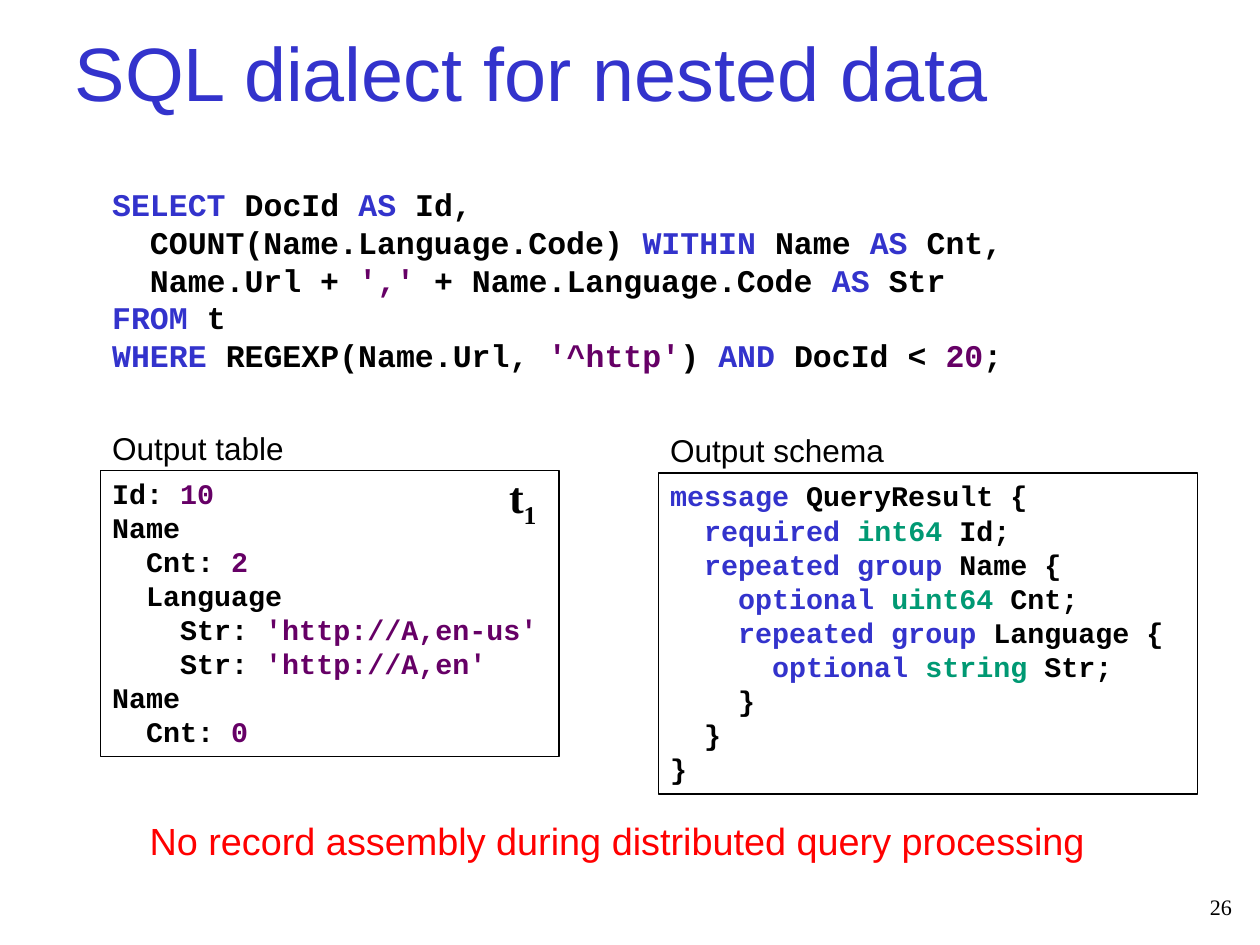
from dataclasses import dataclass
from functools import partial

from pptx import Presentation
from pptx.dml.color import RGBColor
from pptx.enum.shapes import MSO_SHAPE
from pptx.enum.text import MSO_ANCHOR, MSO_AUTO_SIZE, PP_ALIGN
from pptx.slide import Slide
from pptx.text.text import TextFrame
from pptx.util import Pt

PX = 9144  # EMU per px, 100 px to the inch
TITLE_ONLY = 5
COLOURS = {
    "plain": "000000",
    "keyword": "3333CC",
    "literal": "660066",
    "type": "009973",
    "alert": "FF0000",
}


@dataclass(frozen=True)
class Span:
    text: str
    colour: str = "plain"
    subscript: bool = False


@dataclass(frozen=True)
class Block:
    left: int
    top: int
    width: int
    height: int
    lines: list[list[Span]]
    size: int
    font: str = "Arial"
    bold: bool = False
    framed: bool = False
    wrap: bool = True
    align: PP_ALIGN = PP_ALIGN.LEFT


plain = Span
keyword = partial(Span, colour="keyword")
literal = partial(Span, colour="literal")
type_name = partial(Span, colour="type")
code = partial(Block, font="Courier New", bold=True)

QUERY = [
    [keyword("SELECT "), plain("DocId "), keyword("AS"), plain(" Id,")],
    [plain("  COUNT(Name.Language.Code) "), keyword("WITHIN"), plain(" Name "),
     keyword("AS "), plain("Cnt,")],
    [plain("  Name.Url + "), literal("',' "), plain("+ Name.Language.Code "),
     keyword("AS "), plain("Str")],
    [keyword("FROM "), plain("t")],
    [keyword("WHERE "), plain("REGEXP(Name.Url, "), literal("'^http'"), plain(") "),
     keyword("AND "), plain("DocId < "), literal("20"), plain(";")],
]
OUTPUT_TABLE = [
    [plain("Id: "), literal("10")],
    [plain("Name")],
    [plain("  Cnt: "), literal("2")],
    [plain("  Language")],
    [plain("    Str: "), literal("'http://A,en-us'")],
    [plain("    Str: "), literal("'http://A,en'")],
    [plain("Name")],
    [plain("  Cnt: "), literal("0")],
]
OUTPUT_SCHEMA = [
    [keyword("message "), plain("QueryResult {")],
    [keyword("  required "), type_name("int64 "), plain("Id;")],
    [keyword("  repeated group "), plain("Name {")],
    [keyword("    optional "), type_name("uint64 "), plain("Cnt;")],
    [keyword("    repeated group "), plain("Language {")],
    [keyword("      optional "), type_name("string "), plain("Str;")],
    [plain("    }")],
    [plain("  }")],
    [plain("}")],
]
TITLE = Block(56, 17, 1000, 92, [[keyword("SQL dialect for nested data")]], 48)
BLOCKS = [
    code(89, 415, 404, 252, OUTPUT_TABLE, 18, framed=True),
    Block(439, 409, 67, 57, [[plain("t"), plain("1", subscript=True)]], 28,
          "Times New Roman", bold=True),
    code(89, 158, 925, 178, QUERY, 20),
    code(581, 417, 475, 283, OUTPUT_SCHEMA, 18, framed=True),
    Block(1014, 783, 82, 32, [[plain("26")]], 14, "Times New Roman",
          align=PP_ALIGN.RIGHT),
    Block(89, 373, 173, 44, [[plain("Output table")]], 20, wrap=False),
    Block(581, 375, 210, 44, [[plain("Output schema")]], 20, wrap=False),
    Block(122, 716, 908, 50,
          [[Span("No record assembly during distributed query processing", "alert")]], 24),
]


def rgb(name: str) -> RGBColor:
    return RGBColor.from_string(COLOURS[name])


def bounds(block: Block) -> list[int]:
    return [n * PX for n in (block.left, block.top, block.width, block.height)]


def write(frame: TextFrame, block: Block) -> None:
    frame.word_wrap = block.wrap
    frame.auto_size = MSO_AUTO_SIZE.NONE
    for index, line in enumerate(block.lines):
        para = frame.add_paragraph() if index else frame.paragraphs[0]
        para.alignment = block.align
        for part in line:
            span = para.add_run()
            span.text = part.text
            span.font.name = block.font
            span.font.size = Pt(block.size)
            span.font.bold = block.bold
            span.font.color.rgb = rgb(part.colour)
            if part.subscript:
                span.font._element.set("baseline", "-25000")


def add_block(page: Slide, block: Block) -> None:
    if block.framed:
        box = page.shapes.add_shape(MSO_SHAPE.RECTANGLE, *bounds(block))
        box.shadow.inherit = False
        box.fill.background()
        box.line.color.rgb = rgb("plain")
        box.line.width = Pt(0.75)
    else:
        box = page.shapes.add_textbox(*bounds(block))
    box.text_frame.vertical_anchor = MSO_ANCHOR.TOP
    write(box.text_frame, block)


def add_title(page: Slide, block: Block) -> None:
    title = page.shapes.title
    title.left, title.top, title.width, title.height = bounds(block)
    title.text_frame.vertical_anchor = MSO_ANCHOR.MIDDLE
    write(title.text_frame, block)


def main() -> None:
    deck = Presentation()
    deck.slide_width, deck.slide_height = 1111 * PX, 833 * PX
    page = deck.slides.add_slide(deck.slide_layouts[TITLE_ONLY])
    add_title(page, TITLE)
    for block in BLOCKS:
        add_block(page, block)
    deck.save("out.pptx")


if __name__ == "__main__":
    main()
